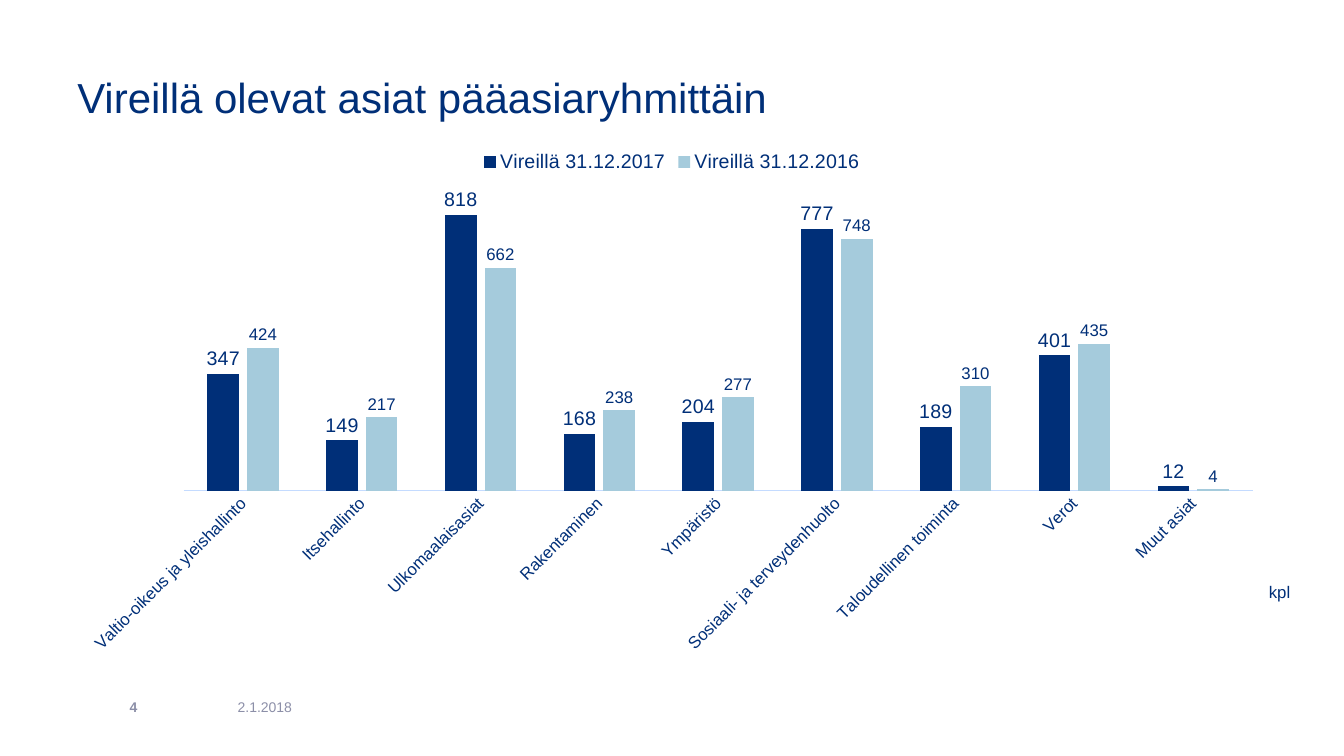
"""Build the slide on pending cases by main category."""
import pptx
import pptx.chart.data
import pptx.dml.color
import pptx.enum.chart
import pptx.enum.text
import pptx.oxml.ns
import pptx.util

PX = 9525
FONT = "Arial"
NAVY = pptx.dml.color.RGBColor(0x00, 0x2F, 0x78)
SKY = pptx.dml.color.RGBColor(0xA5, 0xCB, 0xDC)
PALE = pptx.dml.color.RGBColor(0xC4, 0xDB, 0xFF)
GREY = pptx.dml.color.RGBColor(0x8C, 0x8F, 0xA8)

CASES = [
    ("Valtio-oikeus ja yleishallinto", 347, 424),
    ("Itsehallinto", 149, 217),
    ("Ulkomaalaisasiat", 818, 662),
    ("Rakentaminen", 168, 238),
    ("Ympäristö", 204, 277),
    ("Sosiaali- ja terveydenhuolto", 777, 748),
    ("Taloudellinen toiminta", 189, 310),
    ("Verot", 401, 435),
    ("Muut asiat", 12, 4),
]


def scale(box):
    """Turn a box in px into EMU lengths."""
    return [n * PX for n in box]


def style(font, size, color=NAVY, bold=False):
    """Set the face, size, colour and weight of a font."""
    font.name = FONT
    font.size = pptx.util.Pt(size)
    font.color.rgb = color
    font.bold = bold


def add_title(slide, box, text):
    """Place and format the title placeholder."""
    title = slide.shapes.title
    title.left, title.top, title.width, title.height = scale(box)
    frame = title.text_frame
    frame.text = text
    frame.vertical_anchor = pptx.enum.text.MSO_ANCHOR.MIDDLE
    line = frame.paragraphs[0]
    line.alignment = pptx.enum.text.PP_ALIGN.LEFT
    style(line.font, 30)


def add_note(slide, box, text, size, color, bold=False,
             anchor=pptx.enum.text.MSO_ANCHOR.MIDDLE):
    """Add a short left-aligned text."""
    frame = slide.shapes.add_textbox(*scale(box)).text_frame
    frame.word_wrap = True
    frame.vertical_anchor = anchor
    frame.text = text
    style(frame.paragraphs[0].font, size, color, bold)


def add_bars(slide, box):
    """Add the column chart that compares the two years."""
    names, now, past = zip(*CASES)
    data = pptx.chart.data.CategoryChartData()
    data.categories = names
    data.add_series("Vireillä 31.12.2017", now)
    data.add_series("Vireillä 31.12.2016", past)
    kind = pptx.enum.chart.XL_CHART_TYPE.COLUMN_CLUSTERED
    chart = slide.shapes.add_chart(kind, *scale(box), data).chart
    style(chart.font, 10)
    chart.has_title = False
    chart.has_legend = True
    chart.legend.position = pptx.enum.chart.XL_LEGEND_POSITION.TOP
    chart.legend.include_in_layout = False
    style(chart.legend.font, 14)

    chart.value_axis.visible = False
    chart.value_axis.has_major_gridlines = False
    chart.value_axis.minimum_scale = 0
    axis = chart.category_axis
    axis.major_tick_mark = pptx.enum.chart.XL_TICK_MARK.NONE
    axis.format.line.color.rgb = PALE
    axis.format.line.width = pptx.util.Pt(0.75)
    style(axis.tick_labels.font, 12)
    body = axis._element.find(".//" + pptx.oxml.ns.qn("a:bodyPr"))
    body.set("rot", "-2700000")

    plot = chart.plots[0]
    plot.gap_width = 150
    plot.overlap = -25
    plot.vary_by_categories = False
    for row, color, size in zip(plot.series, (NAVY, SKY), (14, 12)):
        row.format.fill.solid()
        row.format.fill.fore_color.rgb = color
        tags = row.data_labels
        tags.show_value = True
        tags.position = pptx.enum.chart.XL_LABEL_POSITION.OUTSIDE_END
        style(tags.font, size)


def add_foot(slide, box):
    """Add the page number and the date side by side."""
    left, top, width, height = box
    split = 103
    add_note(slide, (left, top, split, height), "4", 10, GREY, True)
    add_note(slide, (left + split, top, width - split, height),
             "2.1.2018", 10, GREY)


def main():
    """Build and save the deck."""
    deck = pptx.Presentation()
    deck.slide_width, deck.slide_height = scale((1280, 720))
    slide = deck.slides.add_slide(deck.slide_layouts[5])
    add_title(slide, (64, 50, 1152, 84), "Vireillä olevat asiat pääasiaryhmittäin")
    add_bars(slide, (64, 133, 1152, 499))
    add_foot(slide, (114, 654, 274, 38))
    add_note(slide, (1199, 549, 45, 29), "kpl", 12, NAVY,
             anchor=pptx.enum.text.MSO_ANCHOR.TOP)
    deck.save("out.pptx")


if __name__ == "__main__":
    main()
